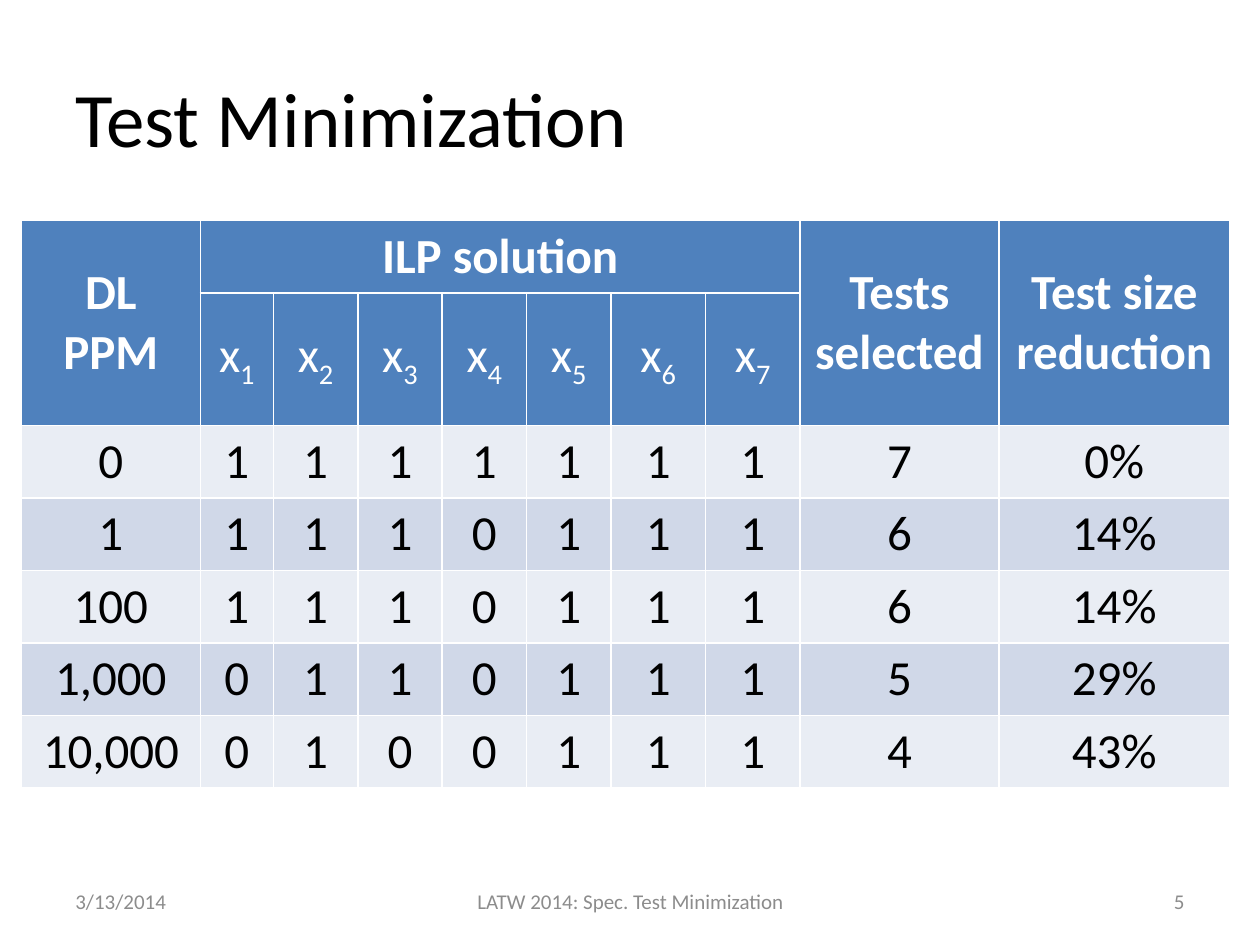
from pptx import Presentation
from pptx.dml.color import RGBColor
from pptx.enum.text import MSO_ANCHOR, PP_ALIGN
from pptx.util import Inches, Pt

WHITE, BLACK, GRAY = "FFFFFF", "000000", "8C8C8C"
BLUE, BANDS = "4F81BD", ("E9EDF4", "D0D8E8")
LEFT, MID, RIGHT = PP_ALIGN.LEFT, PP_ALIGN.CENTER, PP_ALIGN.RIGHT

WIDTHS = [1.42, 0.58] + [0.67] * 4 + [0.75] * 2 + [1.58, 1.83]
HEIGHTS = [0.57, 1.05] + [0.57] * 5

# Defect level, values of x1 to x7, tests selected, test size reduction
RESULTS = [
    ("0", "1111111", "7", "0%"),
    ("1", "1110111", "6", "14%"),
    ("100", "1110111", "6", "14%"),
    ("1,000", "0110111", "5", "29%"),
    ("10,000", "0100111", "4", "43%"),
]
FOOTERS = [
    ("3/13/2014", 0.5, 2.33, LEFT),
    ("LATW 2014: Spec. Test Minimization", 3.42, 3.17, MID),
    ("5", 7.17, 2.33, RIGHT),
]


def color(code):
    return RGBColor.from_string(code)


def add_run(para, text, size, code, bold=False):
    run = para.add_run()
    run.text = text
    look = {"name": "Calibri", "size": Pt(size), "bold": bold}
    for key, value in look.items():
        setattr(run.font, key, value)
    run.font.color.rgb = color(code)
    return run


def write(frame, text, size, code, align, bold=False):
    frame.word_wrap = True
    frame.vertical_anchor = MSO_ANCHOR.MIDDLE
    for i, line in enumerate(text.split("\n")):
        para = frame.add_paragraph() if i else frame.paragraphs[0]
        para.alignment = align
        add_run(para, line, size, code, bold)


def fill_cell(cell, text, back, code, bold=False):
    cell.fill.solid()
    cell.fill.fore_color.rgb = color(back)
    write(cell.text_frame, text, 28, code, MID, bold)
    cell.vertical_anchor = MSO_ANCHOR.MIDDLE


def add_title(slide, text):
    title = slide.shapes.title
    title.left, title.top = Inches(0.5), Inches(0.3)
    title.width, title.height = Inches(9), Inches(1.25)
    write(title.text_frame, text, 44, BLACK, LEFT)


def add_footer(slide, text, left, width, align):
    box = slide.shapes.add_textbox(
        Inches(left), Inches(6.95), Inches(width), Inches(0.4))
    write(box.text_frame, text, 12, GRAY, align)


def add_head(table):
    # Title cells as row, column, last row, last column, text
    heads = [
        (0, 0, 1, 0, "DL\nPPM"),
        (0, 1, 0, 7, "ILP solution"),
        (0, 8, 1, 8, "Tests selected"),
        (0, 9, 1, 9, "Test size reduction"),
    ]
    for row, col, end_row, end_col, text in heads:
        cell = table.cell(row, col)
        cell.merge(table.cell(end_row, end_col))
        fill_cell(cell, text, BLUE, WHITE, True)

    # Variables with subscripts
    for num in range(1, 8):
        cell = table.cell(1, num)
        fill_cell(cell, "x", BLUE, WHITE)
        sub = add_run(cell.text_frame.paragraphs[0], str(num), 28, WHITE)
        sub.font._element.set("baseline", "-25000")


def add_results(slide):
    table = slide.shapes.add_table(
        len(HEIGHTS), len(WIDTHS), Inches(0.17), Inches(1.75),
        Inches(sum(WIDTHS)), Inches(sum(HEIGHTS))).table
    for col, width in zip(table.columns, WIDTHS):
        col.width = Inches(width)
    for row, height in zip(table.rows, HEIGHTS):
        row.height = Inches(height)
    add_head(table)
    for i, (level, bits, count, cut) in enumerate(RESULTS):
        for j, text in enumerate([level, *bits, count, cut]):
            fill_cell(table.cell(i + 2, j), text, BANDS[i % 2], BLACK)


def main():
    deck = Presentation()
    deck.slide_width, deck.slide_height = Inches(10), Inches(7.5)
    slide = deck.slides.add_slide(deck.slide_layouts[5])
    add_title(slide, "Test Minimization")
    add_results(slide)
    for footer in FOOTERS:
        add_footer(slide, *footer)
    deck.save("out.pptx")


if __name__ == "__main__":
    main()
